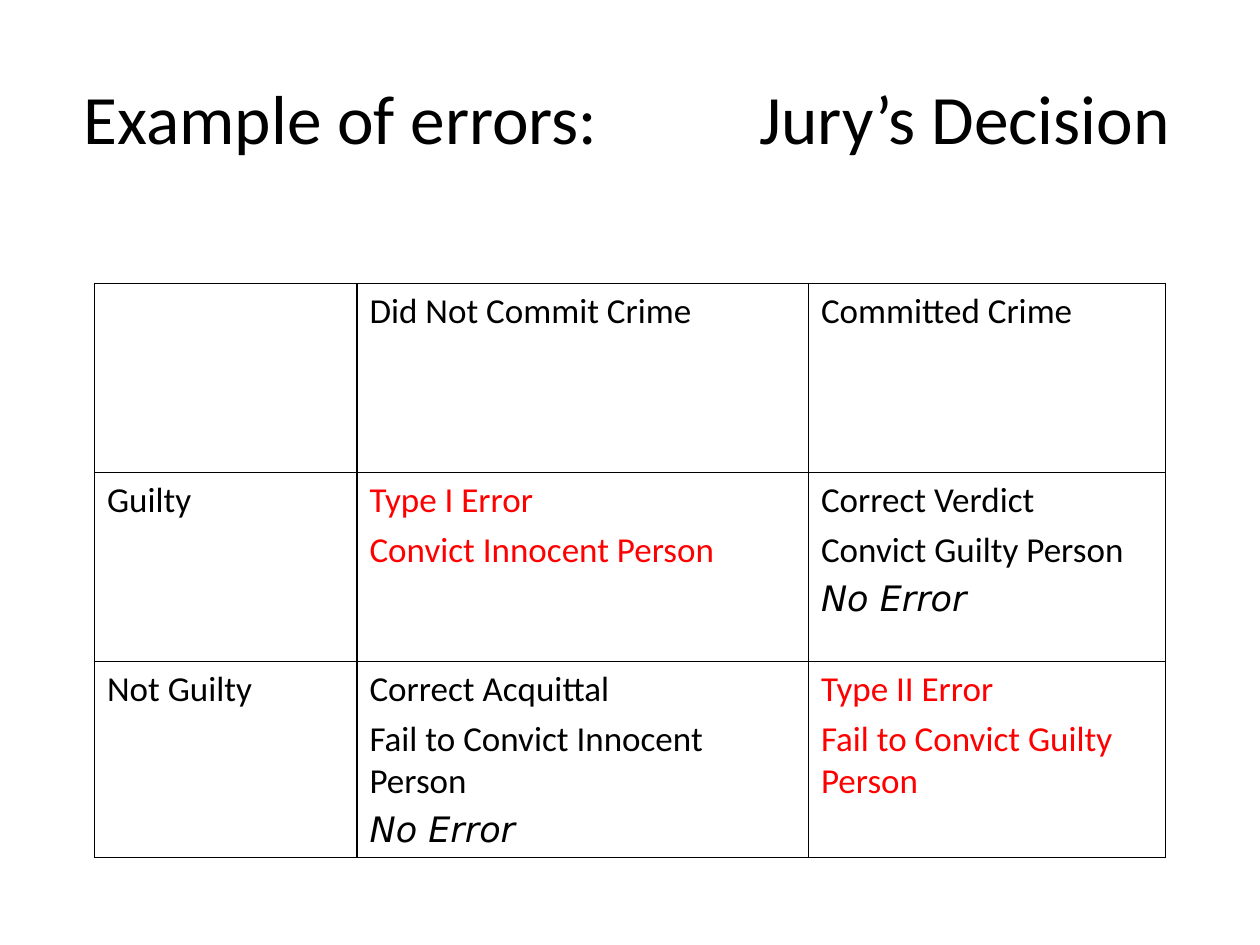
from lxml import etree
from pptx import Presentation
from pptx import util as u
from pptx.dml import color
from pptx.enum import text
from pptx.oxml import ns

BLACK, RED = "000000", "FF0000"
TITLE = "Example of errors:\tJury’s Decision"
COLUMNS = [150, 258, 204]
ROW_HEIGHT = 108
VERDICTS = [
    [[], ["Did Not Commit Crime"], ["Committed Crime"]],
    [["Guilty"], ["Type I Error", "Convict Innocent Person"],
     ["Correct Verdict", "Convict Guilty Person", "No Error"]],
    [["Not Guilty"],
     ["Correct Acquittal", "Fail to Convict Innocent Person", "No Error"],
     ["Type II Error", "Fail to Convict Guilty Person"]],
]


def set_font(font, size, hex_color, name="Calibri", italic=False):
    font.size = u.Pt(size)
    font.name = name
    font.italic = italic
    font.color.rgb = color.RGBColor.from_string(hex_color)


def add_element(parent, tag, **attributes):
    return etree.SubElement(parent, ns.qn(tag), attributes)


def add_borders(cell):
    properties = cell._tc.get_or_add_tcPr()
    for position, side in enumerate(("a:lnL", "a:lnR", "a:lnT", "a:lnB")):
        line = add_element(properties, side, w=str(u.Pt(1)))
        fill = add_element(line, "a:solidFill")
        add_element(fill, "a:srgbClr", val=BLACK)
        properties.insert(position, line)


def fill_cell(cell, lines):
    cell.fill.background()
    add_borders(cell)
    cell.text_frame.text = "\n".join(lines)
    is_error = bool(lines) and lines[0].startswith("Type")
    for paragraph in cell.text_frame.paragraphs:
        paragraph.space_before = u.Pt(4)
        no_error = paragraph.text == "No Error"
        set_font(paragraph.font, 20, RED if is_error else BLACK,
                 "DejaVu Sans" if no_error else "Calibri", no_error)


def add_title(slide):
    title = slide.shapes.title
    title.left, title.top = u.Pt(36), u.Pt(21.6)
    title.width, title.height = u.Pt(648), u.Pt(90)
    frame = title.text_frame
    frame.text = TITLE
    frame.margin_left = u.Pt(12)
    frame.vertical_anchor = text.MSO_ANCHOR.MIDDLE
    paragraph = frame.paragraphs[0]
    paragraph.alignment = text.PP_ALIGN.LEFT
    properties = paragraph._p.get_or_add_pPr()
    tabs = add_element(properties, "a:tabLst")
    add_element(tabs, "a:tab", pos=str(u.Pt(386)), algn="l")
    set_font(paragraph.font, 39.6, BLACK)


def add_verdict_table(slide):
    table = slide.shapes.add_table(
        len(VERDICTS), len(COLUMNS), u.Pt(54), u.Pt(162),
        u.Pt(sum(COLUMNS)), u.Pt(ROW_HEIGHT * len(VERDICTS))).table
    table.first_row = table.horz_banding = False
    for column, width in zip(table.columns, COLUMNS):
        column.width = u.Pt(width)
    for row, verdicts in zip(table.rows, VERDICTS):
        row.height = u.Pt(ROW_HEIGHT)
        for cell, lines in zip(row.cells, verdicts):
            fill_cell(cell, lines)


def main():
    presentation = Presentation()
    presentation.slide_width, presentation.slide_height = u.Pt(720), u.Pt(540)
    slide = presentation.slides.add_slide(presentation.slide_layouts[5])
    add_title(slide)
    add_verdict_table(slide)
    presentation.save("out.pptx")


if __name__ == "__main__":
    main()
